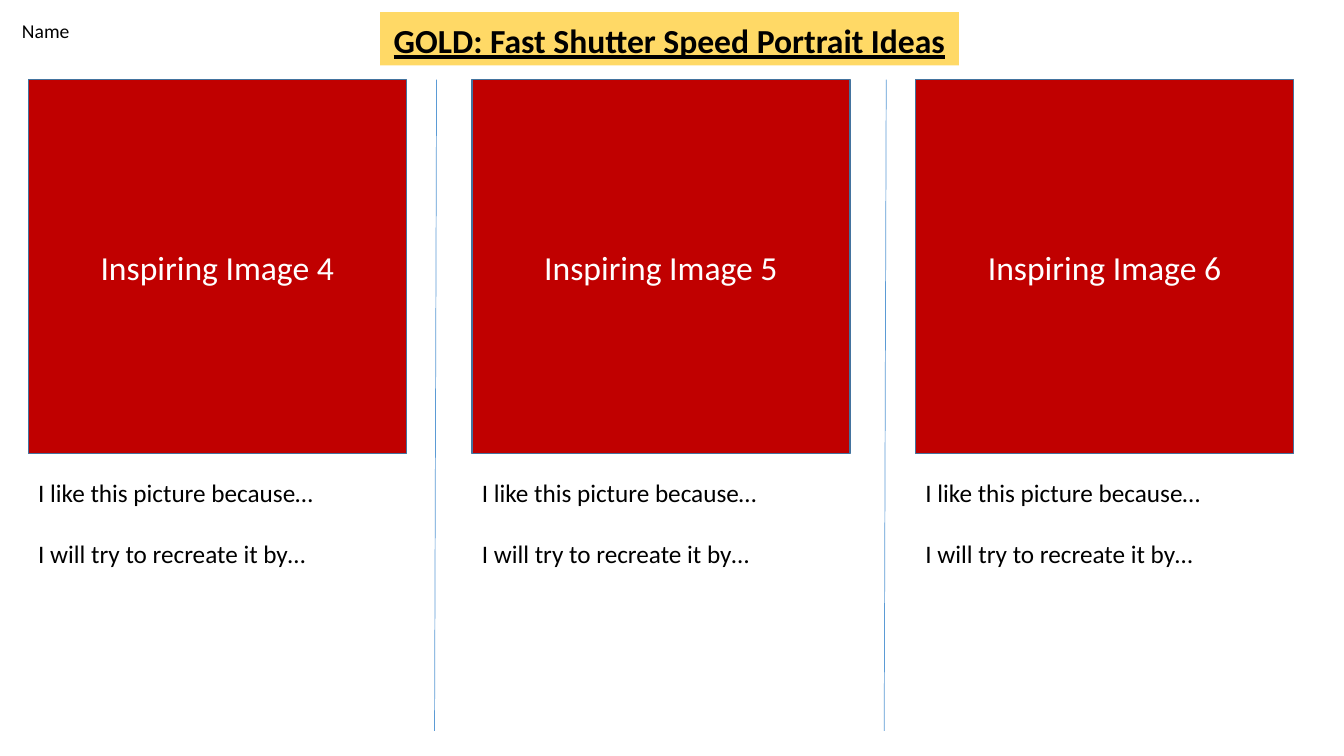
from dataclasses import dataclass

from lxml import etree
from pptx import Presentation
from pptx.dml.color import RGBColor
from pptx.enum.shapes import MSO_CONNECTOR, MSO_SHAPE
from pptx.enum.text import MSO_ANCHOR, MSO_AUTO_SIZE, PP_ALIGN
from pptx.oxml.ns import qn
from pptx.util import Inches, Pt

RECTANGLE = MSO_SHAPE.RECTANGLE
STRAIGHT = MSO_CONNECTOR.STRAIGHT
TOP, MIDDLE = MSO_ANCHOR.TOP, MSO_ANCHOR.MIDDLE
CENTER = PP_ALIGN.CENTER
NO_FIT = MSO_AUTO_SIZE.NONE


@dataclass(frozen=True)
class Theme:
    font: str = "Calibri"
    black: RGBColor = RGBColor(0, 0, 0)
    white: RGBColor = RGBColor(255, 255, 255)
    gold: RGBColor = RGBColor(0xFF, 0xD9, 0x66)
    red: RGBColor = RGBColor(0xC0, 0, 0)
    outline: RGBColor = RGBColor(0x43, 0x73, 0x9E)
    divider: RGBColor = RGBColor(0x5B, 0x9B, 0xD5)
    heading: Pt = Pt(24)
    body: Pt = Pt(18)
    label: Pt = Pt(14)


theme = Theme()


def style_text(box, size, color):
    for para in box.text_frame.paragraphs:
        for span in para.runs:
            span.font.name = theme.font
            span.font.size = size
            span.font.color.rgb = color


deck = Presentation()
deck.slide_width, deck.slide_height = Inches(13.33), Inches(7.5)
page = deck.slides.add_slide(deck.slide_layouts[5])

# Name label
name_box = page.shapes.add_textbox(Inches(0.12), Inches(0.12), Inches(6.67), Inches(0.34))
name_box.text_frame.word_wrap = True
name_box.text_frame.text = "Name"
name_box.text_frame.paragraphs[0].line_spacing = 1.07
style_text(name_box, theme.label, theme.black)

# Title banner
title = page.shapes.title
title.left, title.top = Inches(3.77), Inches(0.12)
title.width, title.height = Inches(5.74), Inches(0.53)
title.fill.solid()
title.fill.fore_color.rgb = theme.gold
title.text_frame.text = "GOLD: Fast Shutter Speed Portrait Ideas"
title.text_frame.word_wrap = False
title.text_frame.auto_size = NO_FIT
title.text_frame.vertical_anchor = TOP
title_para = title.text_frame.paragraphs[0]
title_para.alignment = CENTER
title_para.line_spacing = 1.07
style_text(title, theme.heading, theme.black)
title_para.runs[0].font.bold = True
title_para.runs[0].font.underline = True

# Three columns: image panel with writing prompts below
for column in range(3):
    left = Inches(0.28 + 4.4 * column)
    panel = page.shapes.add_shape(RECTANGLE, left, Inches(0.79), Inches(3.75), Inches(3.71))
    panel.shadow.inherit = False
    panel.fill.solid()
    panel.fill.fore_color.rgb = theme.red
    panel.line.color.rgb = theme.outline
    panel.line.width = Pt(1)
    panel.text_frame.text = f"Inspiring Image {column + 4}"
    panel.text_frame.vertical_anchor = MIDDLE
    panel.text_frame.paragraphs[0].alignment = CENTER
    style_text(panel, theme.heading, theme.white)

    prompts = page.shapes.add_textbox(left, Inches(4.69), Inches(3.75), Inches(1.31))
    prompts.text_frame.word_wrap = True
    prompts.text_frame.text = "I like this picture because…\nI will try to recreate it by…"
    prompts.text_frame.paragraphs[1].space_before = Pt(22)
    style_text(prompts, theme.body, theme.black)

# Slightly slanted dividers between the columns
for top_x in (4.33, 8.79):
    divider = page.shapes.add_connector(
        STRAIGHT, Inches(top_x), Inches(0.79), Inches(top_x - 0.02), Inches(7.25))
    divider.line.color.rgb = theme.divider
    divider.line.width = Pt(0.5)
    etree.SubElement(divider.element.spPr, qn("a:effectLst"))

deck.save("out.pptx")
